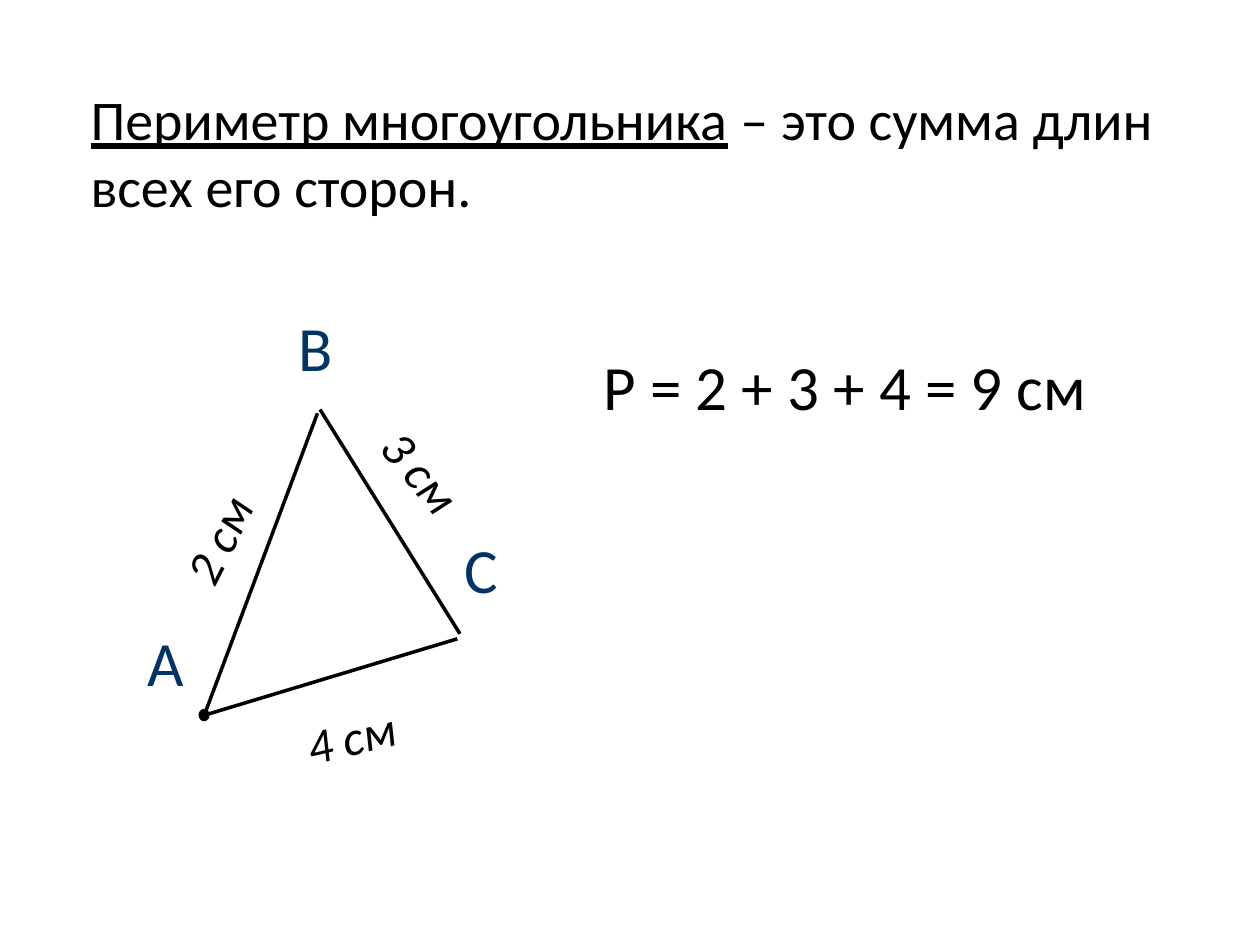
from lxml import etree
from pptx import Presentation
from pptx.dml.color import RGBColor
from pptx.enum import shapes, text
from pptx.oxml.ns import qn
from pptx.util import Inches, Pt

BLACK = RGBColor(0x00, 0x00, 0x00)
NAVY = RGBColor(0x00, 0x33, 0x66)
WHITE = RGBColor(0xFF, 0xFF, 0xFF)
FONT = "Calibri"


def style(paragraph, size, color, italic=False):
    """Set the font of a left-aligned paragraph."""
    paragraph.alignment = text.PP_ALIGN.LEFT
    font = paragraph.font
    font.name, font.size, font.italic = FONT, Pt(size), italic
    font.color.rgb = color


def add_definition(slide):
    """Write the definition with its term underlined."""
    box = slide.shapes.add_textbox(Inches(0.62), Inches(0.62), Inches(8.91), Inches(1.18))
    frame = box.text_frame
    frame.word_wrap = True
    opening = frame.paragraphs[0]
    term = opening.add_run()
    term.text = "Периметр многоугольника"
    term.font.underline = True
    opening.add_run().text = " – это сумма длин"
    ending = frame.add_paragraph()
    ending.text = "всех его сторон."
    for paragraph in (opening, ending):
        style(paragraph, 32, BLACK)


def add_label(slide, wording, left, top, width, height, size, color, italic=False, rotation=0):
    """Write a one-line label, turned when it follows a side."""
    label = slide.shapes.add_textbox(Inches(left), Inches(top), Inches(width), Inches(height))
    label.rotation = rotation
    frame = label.text_frame
    frame.word_wrap = False
    frame.text = wording
    style(frame.paragraphs[0], size, color, italic)


def add_side(slide, start, end):
    """Draw one side of the triangle."""
    side = slide.shapes.add_connector(
        shapes.MSO_CONNECTOR.STRAIGHT, *(Inches(value) for value in start + end))
    side.line.color.rgb = BLACK
    side.line.width = Pt(2)
    etree.SubElement(side._element.spPr, qn("a:effectLst"))


def add_vertex_dot(slide):
    """Mark vertex A with a dot."""
    dot = slide.shapes.add_shape(
        shapes.MSO_SHAPE.FLOWCHART_CONNECTOR,
        Inches(1.59), Inches(5.64), Inches(0.06), Inches(0.07))
    dot.shadow.inherit = False
    dot.fill.solid()
    dot.fill.fore_color.rgb = BLACK
    dot.line.color.rgb = BLACK
    dot.line.width = Pt(2)


def add_formula(slide):
    """Write the perimeter sum on a white rectangle."""
    formula = slide.shapes.add_shape(
        shapes.MSO_SHAPE.RECTANGLE, Inches(4.69), Inches(2.71), Inches(4.07), Inches(0.71))
    formula.shadow.inherit = False
    formula.fill.solid()
    formula.fill.fore_color.rgb = WHITE
    formula.line.fill.background()
    frame = formula.text_frame
    frame.word_wrap = False
    frame.vertical_anchor = text.MSO_ANCHOR.TOP
    frame.text = "Р = 2 + 3 + 4 = 9 см"
    style(frame.paragraphs[0], 36, BLACK)


def main():
    """Build the slide on the perimeter of a polygon."""
    deck = Presentation()
    deck.slide_width, deck.slide_height = Inches(10), Inches(7.5)
    slide = deck.slides.add_slide(deck.slide_layouts[6])

    add_definition(slide)
    for start, end in (((2.54, 3.25), (3.65, 5.03)),
                       ((1.62, 5.68), (2.52, 3.28)),
                       ((1.61, 5.68), (3.63, 5.07))):
        add_side(slide, start, end)
    add_vertex_dot(slide)
    for vertex, left, top, width in (("A", 1.07, 4.9, 0.49),
                                     ("B", 2.27, 2.4, 0.48),
                                     ("C", 3.59, 4.16, 0.47)):
        add_label(slide, vertex, left, top, width, 0.71, 36, NAVY)
    for length, left, top, rotation in (("2 см", 1.27, 3.99, 296.9),
                                        ("3 см", 2.89, 3.46, 50.3),
                                        ("4 см", 2.33, 5.56, 346.8)):
        add_label(slide, length, left, top, 0.92, 0.57, 28, BLACK, True, rotation)
    add_formula(slide)

    deck.save("out.pptx")


if __name__ == "__main__":
    main()
